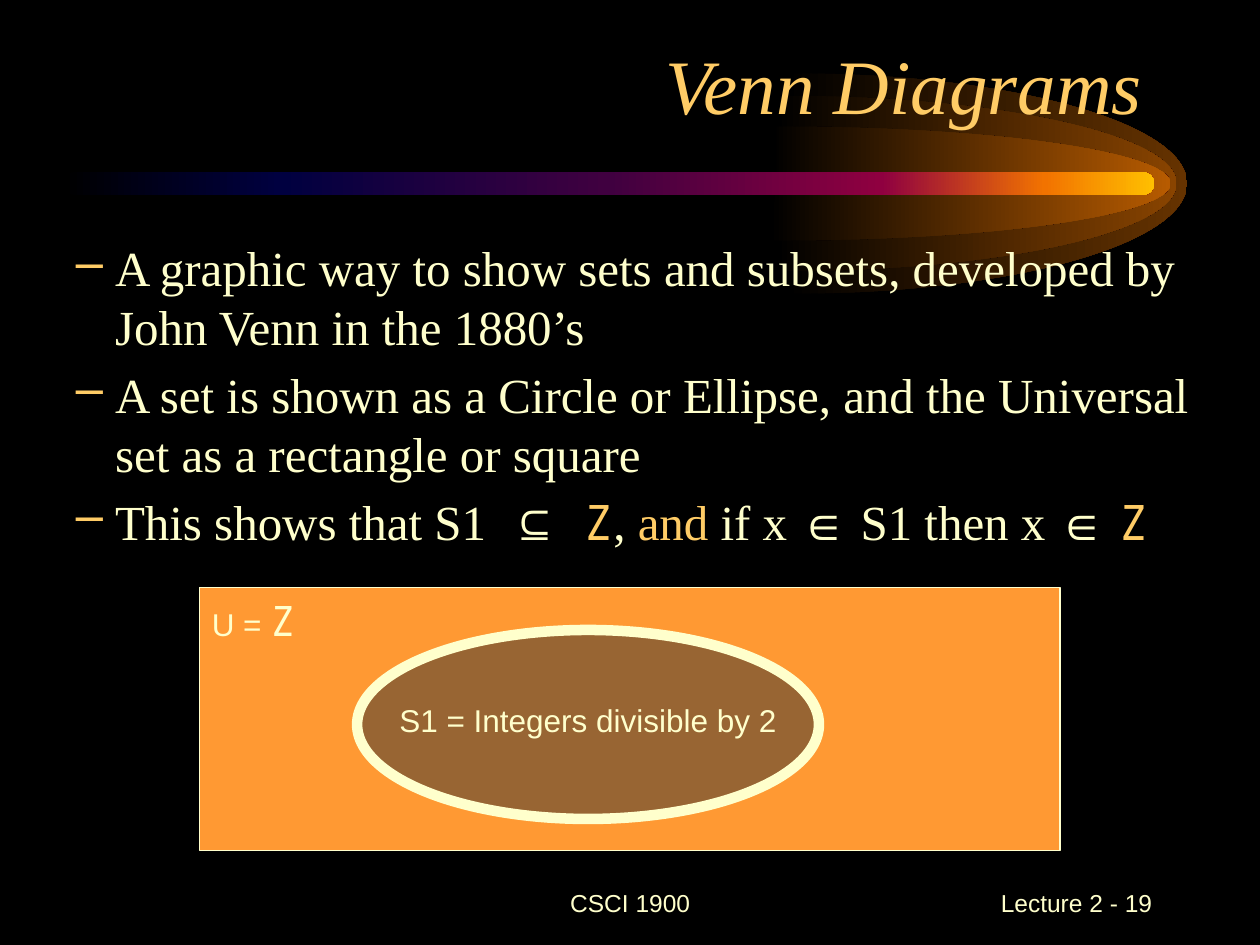
from lxml import etree
from pptx import Presentation
from pptx.dml.color import RGBColor
from pptx.enum.shapes import MSO_SHAPE
from pptx.enum.text import MSO_ANCHOR, PP_ALIGN
from pptx.oxml.ns import qn
from pptx.util import Cm, Pt

LEFT, CENTER, RIGHT = PP_ALIGN.LEFT, PP_ALIGN.CENTER, PP_ALIGN.RIGHT
TOP, MIDDLE, BOTTOM = MSO_ANCHOR.TOP, MSO_ANCHOR.MIDDLE, MSO_ANCHOR.BOTTOM
RECTANGLE, OVAL, ROUNDED = MSO_SHAPE.RECTANGLE, MSO_SHAPE.OVAL, MSO_SHAPE.ROUNDED_RECTANGLE

BLACK = RGBColor(0x00, 0x00, 0x00)
CREAM = RGBColor(0xFF, 0xFF, 0xCC)
GOLD = RGBColor(0xFF, 0xCC, 0x66)
ORANGE = RGBColor(0xFF, 0x99, 0x33)
CHARCOAL = RGBColor(0x33, 0x33, 0x33)
DARK_BROWN = RGBColor(0x66, 0x33, 0x00)
BROWN = RGBColor(0x89, 0x44, 0x00)
AMBER = RGBColor(0xB7, 0x5B, 0x00)
NAVY = RGBColor(0x00, 0x00, 0x40)
PURPLE = RGBColor(0x40, 0x00, 0x40)
CRIMSON = RGBColor(0x8F, 0x00, 0x40)
FLAME = RGBColor(0xF2, 0x73, 0x00)
YELLOW = RGBColor(0xFF, 0xBF, 0x00)

SERIF, SANS, MONO = "Times New Roman", "Arial", "Noto Sans Mono"


def apply_gradient(shape, stops):
    shape.shadow.inherit = False
    shape.line.fill.background()
    shape.fill.gradient()
    shape.fill.gradient_angle = 0
    stop_list = next(shape.element.iter(qn("a:gsLst")))
    for stop in list(stop_list):
        stop_list.remove(stop)
    for percent, color in stops:
        stop = etree.SubElement(stop_list, qn("a:gs"), pos=str(percent * 1000))
        etree.SubElement(stop, qn("a:srgbClr"), val=str(color))


def write_runs(paragraph, runs, alignment):
    paragraph.alignment = alignment
    for text, size, font_name, color in runs:
        run = paragraph.add_run()
        run.text = text
        run.font.size = Pt(size)
        run.font.name = font_name
        run.font.color.rgb = color


presentation = Presentation()
presentation.slide_width = Cm(25.4)
presentation.slide_height = Cm(19.05)
slide = presentation.slides.add_slide(presentation.slide_layouts[6])
slide.background.fill.solid()
slide.background.fill.fore_color.rgb = BLACK

middle, tail, radius_x, roundness = 3.7, 0.13, 7.95, 0.55
for center, radius_y, color in [(15.98, 2.22, DARK_BROWN), (15.77, 1.77, BROWN), (15.65, 1.15, AMBER)]:
    upper, lower, tip = middle - radius_y, middle + radius_y, center + radius_x
    corners = [(tip, middle), (center, lower), (center - tail, lower), (center, middle)]
    builder = slide.shapes.build_freeform(Cm(center), Cm(upper))
    builder.add_line_segments([(Cm(x), Cm(y)) for x, y in corners], close=True)
    comet = builder.convert_to_shape()
    handle_x, handle_y = center + roundness * radius_x, roundness * radius_y
    curves = [
        [(handle_x, upper), (tip, middle - handle_y), (tip, middle)],
        [(tip, middle + handle_y), (handle_x, lower), (center, lower)],
    ]
    for segment, curve in zip(list(comet.element.iter(qn("a:lnTo"))), curves):
        bezier = etree.Element(qn("a:cubicBezTo"))
        for x, y in curve:
            local_x, local_y = Cm(x) - comet.left, Cm(y) - comet.top
            etree.SubElement(bezier, qn("a:pt"), x=str(local_x), y=str(local_y))
        segment.getparent().replace(segment, bezier)
    apply_gradient(comet, [(0, BLACK), (100, color)])

bar = slide.shapes.add_shape(ROUNDED, Cm(1.27), Cm(3.47), Cm(22), Cm(0.46))
bar.adjustments[0] = 0.5
apply_gradient(bar, [(0, BLACK), (20, NAVY), (50, PURPLE), (75, CRIMSON), (90, FLAME), (100, YELLOW)])

for left, top, width, height, anchor, alignment, run in [
    (8.68, 17.56, 8.05, 1.27, MIDDLE, CENTER, ("CSCI 1900", 14, SANS, CREAM)),
    (18.2, 17.56, 5.28, 1.27, MIDDLE, RIGHT, ("Lecture 2 - 19", 14, SANS, CREAM)),
    (1.69, 0.64, 21.59, 2.11, BOTTOM, RIGHT, ("Venn Diagrams", 44, SERIF, GOLD)),
]:
    label = slide.shapes.add_textbox(Cm(left), Cm(top), Cm(width), Cm(height))
    label.text_frame.word_wrap = True
    label.text_frame.vertical_anchor = anchor
    write_runs(label.text_frame.paragraphs[0], [run], alignment)
    label.text_frame.paragraphs[0].runs[0].font.italic = run[2] == SERIF

body = slide.shapes.add_textbox(Cm(0), Cm(4.67), Cm(25.4), Cm(11.3))
body.text_frame.word_wrap = True
bullets = [
    [("A graphic way to show sets and subsets, developed by John Venn in the 1880’s", SERIF, CREAM)],
    [("A set is shown as a Circle or Ellipse, and the Universal set as a rectangle or square", SERIF, CREAM)],
    [
        ("This shows that S1  ⊆  ", SERIF, CREAM),
        ("Z", MONO, GOLD),
        (", ", SERIF, CREAM),
        ("and", SERIF, GOLD),
        (" if x ∈ S1 then x ∈ ", SERIF, CREAM),
        ("Z", MONO, GOLD),
    ],
]
for index, bullet in enumerate(bullets):
    paragraph = body.text_frame.add_paragraph() if index else body.text_frame.paragraphs[0]
    write_runs(paragraph, [(text, 28, font, color) for text, font, color in bullet], LEFT)
    paragraph.level = 1
    paragraph.line_spacing = Pt(33.7)
    paragraph.space_before = Pt(5) if index else Pt(0)
    properties = paragraph._p.get_or_add_pPr()
    properties.set("marL", str(Cm(2.07)))
    properties.set("indent", str(Cm(-0.79)))
    bullet_color = etree.SubElement(properties, qn("a:buClr"))
    etree.SubElement(bullet_color, qn("a:srgbClr"), val=str(GOLD))
    etree.SubElement(properties, qn("a:buChar"), char="–")

universe_runs = [("U = ", 18, SANS, CREAM), ("Z", 24, MONO, CREAM)]
subset_runs = [("S1 = Integers divisible by 2", 18, SANS, CREAM)]
for kind, left, top, width, height, color, line_width, wrap, anchor, alignment, runs in [
    (RECTANGLE, 4.02, 11.85, 17.35, 5.29, ORANGE, 0.75, True, TOP, LEFT, universe_runs),
    (OVAL, 7.2, 12.7, 9.31, 3.81, CHARCOAL, 6, False, MIDDLE, CENTER, subset_runs),
]:
    region = slide.shapes.add_shape(kind, Cm(left), Cm(top), Cm(width), Cm(height))
    region.shadow.inherit = False
    region.fill.solid()
    region.fill.fore_color.rgb = color
    region.line.color.rgb = CREAM
    region.line.width = Pt(line_width)
    region.text_frame.word_wrap = wrap
    region.text_frame.vertical_anchor = anchor
    write_runs(region.text_frame.paragraphs[0], runs, alignment)
    if kind == OVAL:
        region.text_frame.margin_bottom = Cm(0.29)
        fill_color = next(region.element.spPr.iter(qn("a:srgbClr")))
        etree.SubElement(fill_color, qn("a:alpha"), val="50000")

presentation.save("out.pptx")
